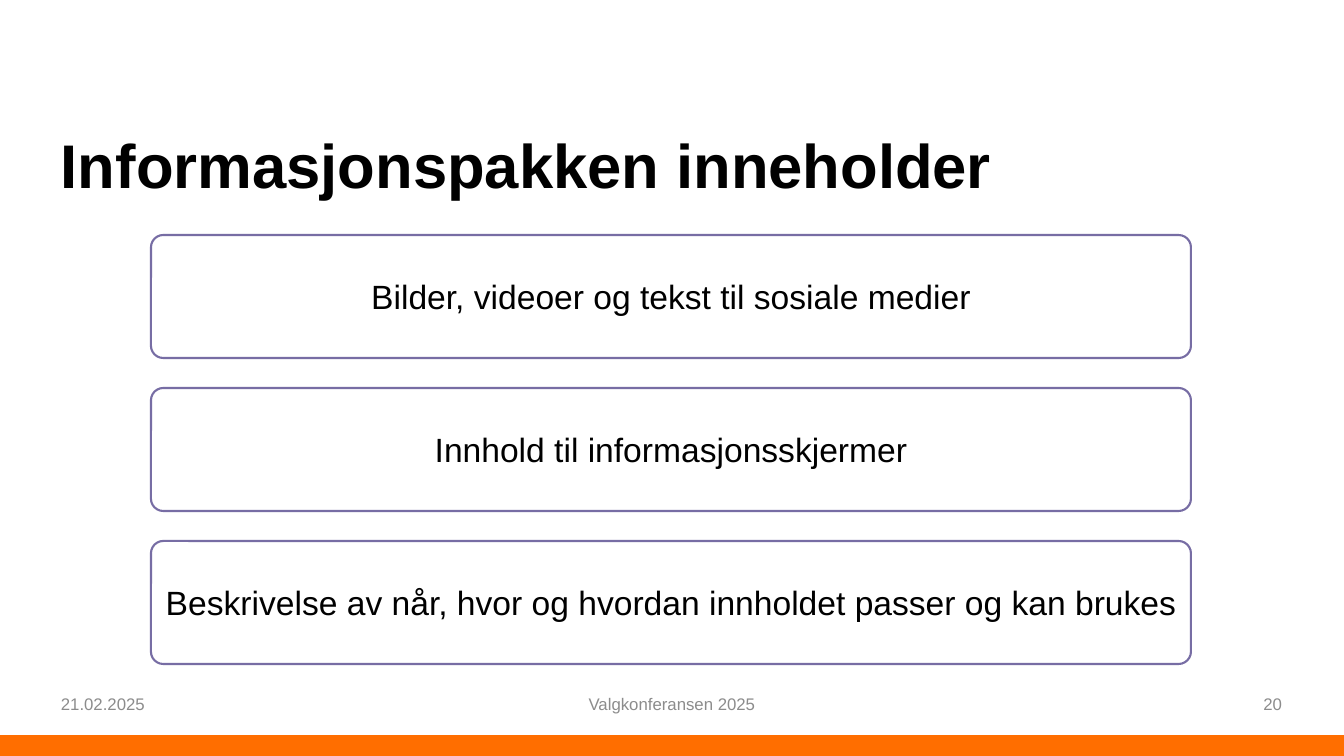
import pptx
import pptx.util
import pptx.dml.color
import pptx.enum.shapes
import pptx.enum.text

# Content
TITLE = "Informasjonspakken inneholder"
PACKAGE_ITEMS = [
    "Bilder, videoer og tekst til sosiale medier",
    "Innhold til informasjonsskjermer",
    "Beskrivelse av når, hvor og hvordan innholdet passer og kan brukes",
]
# Footer: text, left, width, alignment
FOOTER = [
    ("21.02.2025", 51, 302, "LEFT"),
    ("Valgkonferansen 2025", 445, 454, "CENTER"),
    ("20", 990, 302, "RIGHT"),
]
COLORS = {
    "band": "FF6E00",
    "card": "FFFFFF",
    "border": "776DA4",
    "text": "000000",
    "footer": "8C8C8C",
}

# Layout in px, 100.8 px to the inch
SLIDE_WIDTH, SLIDE_HEIGHT = 1344, 756
BAND_TOP = 735
CARD_LEFT, CARD_WIDTH, CARD_HEIGHT = 151, 1040, 123
FIRST_CARD_TOP, CARD_GAP = 235, 30
FOOTER_TOP, FOOTER_HEIGHT = 683, 41


def px(length):
    return pptx.util.Emu(round(length * 914400 / 100.8))


def rgb(name):
    return pptx.dml.color.RGBColor.from_string(COLORS[name])


def write(shape, text, size, color, align, bold=False):
    frame = shape.text_frame
    frame.text = text
    frame.word_wrap = True
    frame.vertical_anchor = pptx.enum.text.MSO_ANCHOR.MIDDLE
    paragraph = frame.paragraphs[0]
    paragraph.alignment = pptx.enum.text.PP_ALIGN[align]
    font = paragraph.runs[0].font
    font.name, font.size, font.bold = "Arial", pptx.util.Pt(size), bold
    font.color.rgb = rgb(color)
    return paragraph


def add_box(kind, box, fill):
    shape = slide.shapes.add_shape(
        pptx.enum.shapes.MSO_SHAPE[kind], *map(px, box))
    shape.shadow.inherit = False
    shape.fill.solid()
    shape.fill.fore_color.rgb = rgb(fill)
    return shape


presentation = pptx.Presentation()
presentation.slide_width = px(SLIDE_WIDTH)
presentation.slide_height = px(SLIDE_HEIGHT)
slide = presentation.slides.add_slide(presentation.slide_layouts[6])

# Band along the bottom edge
band = add_box("RECTANGLE",
               (0, BAND_TOP, SLIDE_WIDTH, SLIDE_HEIGHT - BAND_TOP), "band")
band.line.fill.background()

# Title
title = slide.shapes.add_textbox(*map(px, (51, 96, 1241, 146)))
write(title, TITLE, 44, "text", "LEFT", bold=True).line_spacing = 0.9

# Footer
for text, left, width, align in FOOTER:
    footer = slide.shapes.add_textbox(
        *map(px, (left, FOOTER_TOP, width, FOOTER_HEIGHT)))
    write(footer, text, 12, "footer", align)

# Cards, stacked at equal gaps
for row, item in enumerate(PACKAGE_ITEMS):
    top = FIRST_CARD_TOP + row * (CARD_HEIGHT + CARD_GAP)
    card = add_box("ROUNDED_RECTANGLE",
                   (CARD_LEFT, top, CARD_WIDTH, CARD_HEIGHT), "card")
    card.adjustments[0] = 0.1
    card.line.color.rgb = rgb("border")
    card.line.width = pptx.util.Pt(1.5)
    card.text_frame.margin_left = card.text_frame.margin_right = px(4)
    write(card, item, 24, "text", "CENTER")

presentation.save("out.pptx")
